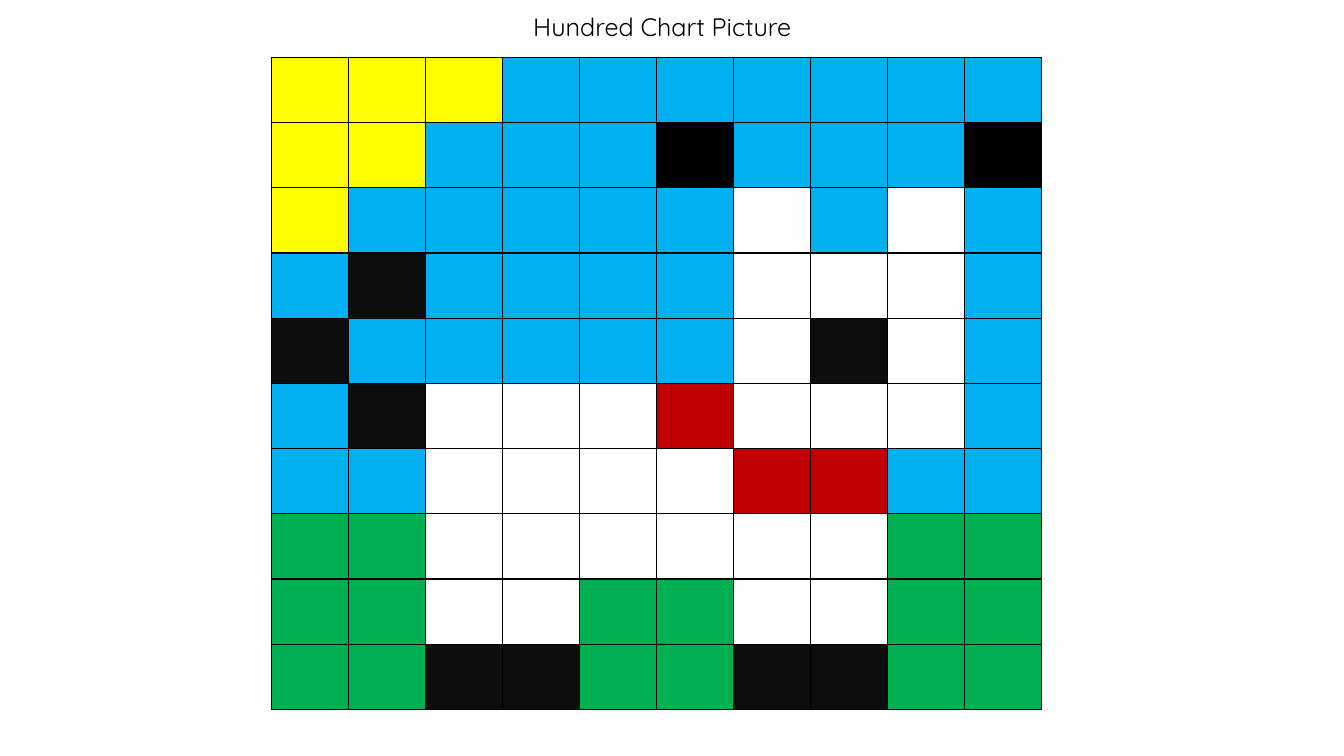
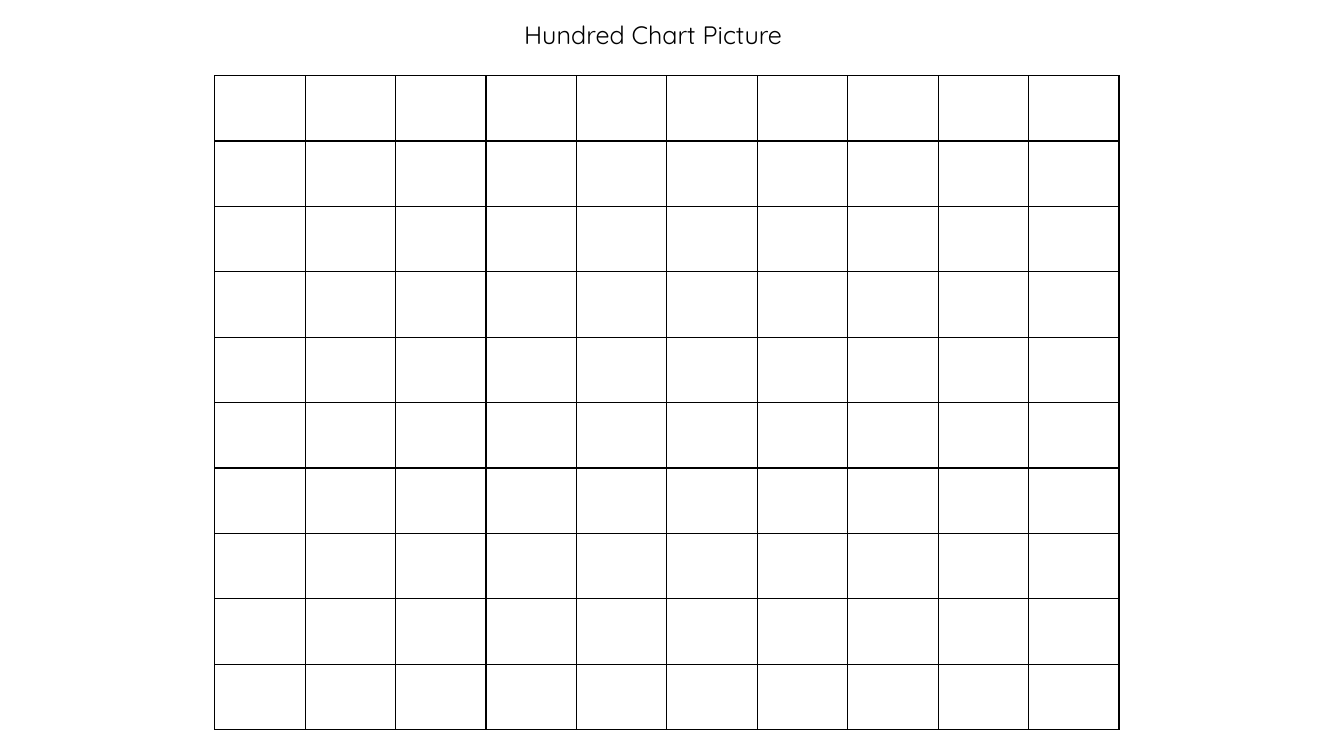
from lxml import etree
from pptx import Presentation
from pptx.dml.color import RGBColor
from pptx.enum.text import MSO_AUTO_SIZE as Fit
from pptx.oxml import parse_xml
from pptx.oxml.ns import nsdecls
from pptx.util import Inches, Pt

TITLE = "Hundred Chart Picture"
FONT = "Quicksand"
INK = "000000"
COLORS = {
    "Y": "FFFF00",  # sun
    "B": "00B0F0",  # sky
    "G": "00B050",  # grass
    "R": "C00000",  # collar
    "W": "FFFFFF",  # body
    "D": "0D0D0D",  # tail, eye and paws
    "K": INK,       # birds
}
DOG = [
    "YYYBBBBBBB",
    "YYBBBKBBBK",
    "YBBBBBWBWB",
    "BDBBBBWWWB",
    "DBBBBBWDWB",
    "BDWWWRWWWB",
    "BBWWWWRRBB",
    "GGWWWWWWGG",
    "GGWWGGWWGG",
    "GGDDGGDDGG",
]
BLANK = ["W" * 10] * 10

# cell colours, table box, title box
PAGES = [
    (DOG, (2.69, 0.57, 7.64, 6.47), (5.19, 0.06, 2.97, 0.4)),
    (BLANK, (2.13, 0.75, 8.97, 6.49), (5.1, 0.14, 3.03, 0.4)),
]


def paint(fill, color):
    fill.solid()
    fill.fore_color.rgb = RGBColor.from_string(color)


def frame(cell):
    """Draw a 1 pt line on each side of a cell."""
    props = cell._tc.get_or_add_tcPr()
    for spot, side in enumerate("LRTB"):
        line = parse_xml(
            f'<a:ln{side} {nsdecls("a")} w="{Pt(1)}"><a:solidFill>'
            f'<a:srgbClr val="{INK}"/></a:solidFill></a:ln{side}>')
        props.insert(spot, line)


prs = Presentation()
prs.slide_width = Inches(13.33)
prs.slide_height = Inches(7.5)

for rows, grid, head in PAGES:
    slide = prs.slides.add_slide(prs.slide_layouts[6])

    box = [Inches(n) for n in grid]
    table = slide.shapes.add_table(len(rows), len(rows[0]), *box).table
    table.first_row = table.horz_banding = False
    for r, row in enumerate(rows):
        for c, key in enumerate(row):
            cell = table.cell(r, c)
            paint(cell.fill, COLORS[key])
            frame(cell)

    text = slide.shapes.add_textbox(*[Inches(n) for n in head]).text_frame
    text.word_wrap = True
    text.auto_size = Fit.SHAPE_TO_FIT_TEXT
    text.text = TITLE
    font = text.paragraphs[0].runs[0].font
    font.name = FONT
    font.size = Pt(18)
    paint(font.fill, INK)

prs.save("out.pptx")
